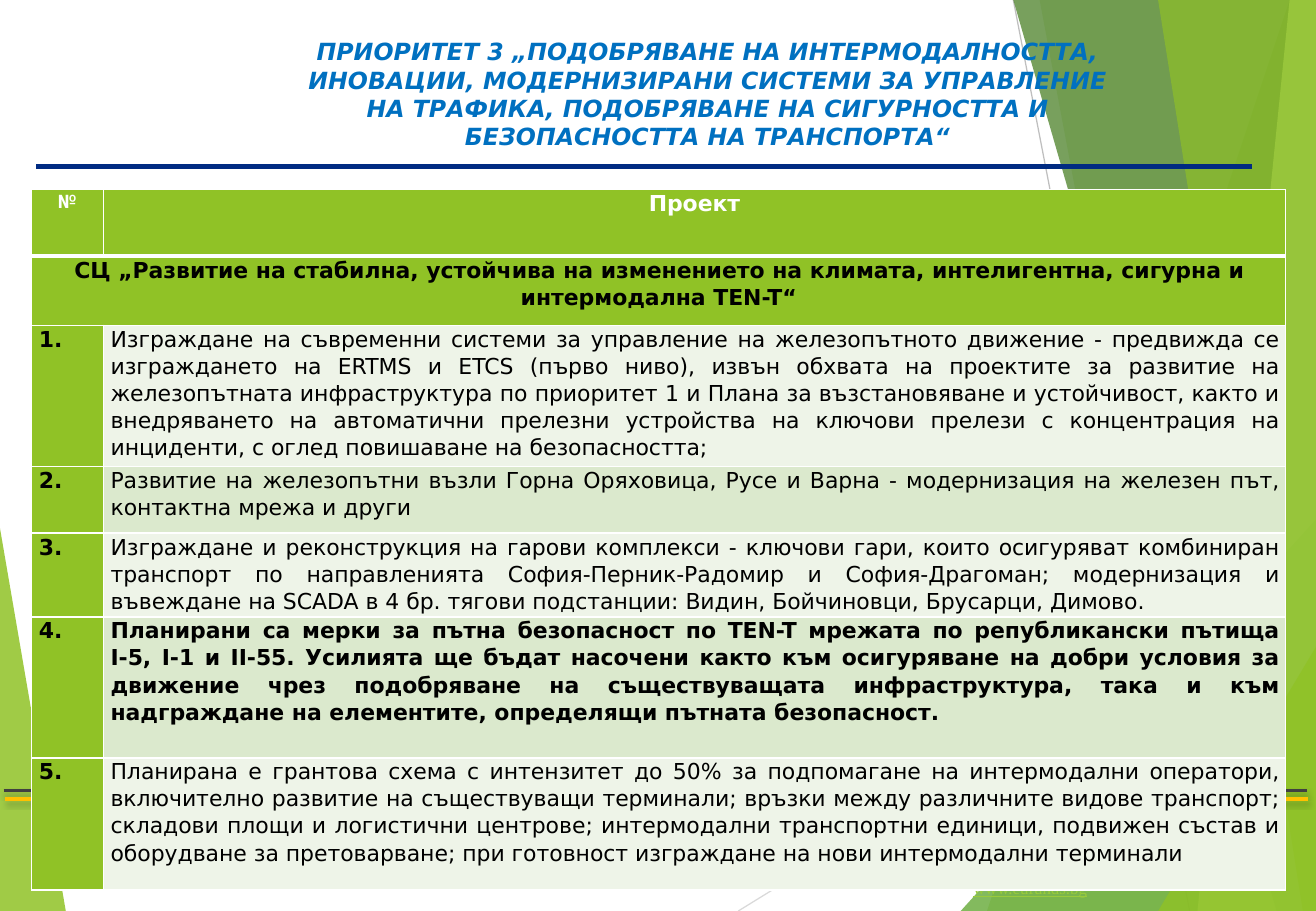
from dataclasses import dataclass

from lxml.etree import SubElement
from pptx import Presentation
from pptx.dml.color import RGBColor
from pptx.enum.shapes import MSO_CONNECTOR
from pptx.enum.text import MSO_ANCHOR, PP_ALIGN
from pptx.oxml.ns import qn
from pptx.util import Inches, Pt


@dataclass(frozen=True)
class Theme:
    green: str = "90C226"
    leaf: str = "54A021"
    forest: str = "3F7819"
    lime: str = "C0E474"
    link: str = "99CA3C"
    title: str = "0070C0"
    rule: str = "002B82"
    dark: str = "404040"
    amber: str = "FFC000"
    black: str = "000000"
    white: str = "FFFFFF"
    bands: tuple = ("EEF4E8", "DBE9CD")
    font: str = "DejaVu Sans"
    number_font: str = "Roboto"
    link_font: str = "Times New Roman"
    title_size: int = 14
    body_size: int = 13
    number_size: int = 11
    link_size: int = 10


theme = Theme()
presentation = Presentation()
presentation.slide_width, presentation.slide_height = Inches(10.83), Inches(7.5)
slide = presentation.slides.add_slide(presentation.slide_layouts[5])
shapes = slide.shapes
# One column and one row are a hundredth of the slide's width and height.
column, row = presentation.slide_width / 100, presentation.slide_height / 100


def write_text(frame, *lines, size=theme.body_size, font=theme.font, color=theme.black,
               bold=False, italic=False, underline=False, align=PP_ALIGN.LEFT, spacing=1.0):
    for index, line in enumerate(lines):
        paragraph = frame.add_paragraph() if index else frame.paragraphs[0]
        paragraph.alignment = align
        paragraph.line_spacing = spacing
        paragraph.space_before = Pt(0)
        run = paragraph.add_run()
        run.text = line
        run.font.name, run.font.size = font, Pt(size)
        run.font.bold, run.font.italic, run.font.underline = bold, italic, underline
        run.font.color.rgb = RGBColor.from_string(color)


def add_line(start, end, color, width, shadow=False):
    line = shapes.add_connector(MSO_CONNECTOR.STRAIGHT,
                                int(start[0] * column), int(start[1] * row),
                                int(end[0] * column), int(end[1] * row))
    line.line.color.rgb = RGBColor.from_string(color)
    line.line.width = Pt(width)
    effects = SubElement(line.element.spPr, qn("a:effectLst"))
    if shadow:
        outer = SubElement(effects, qn("a:outerShdw"), blurRad=str(Pt(3)),
                           dist=str(Pt(2)), dir="5400000", rotWithShape="0")
        shade = SubElement(outer, qn("a:srgbClr"), val=theme.black)
        SubElement(shade, qn("a:alpha"), val="35000")


# Background facets: colour, opacity in percent, corners
add_line((56.1, 100), (100, 60.9), "D9D9D9", 0.75)
add_line((77, 0), (90.4, 100), "BFBFBF", 0.75)
facets = [
    (theme.green, 85, [(0, 58.5), (4.9, 100), (0, 100)]),
    (theme.green, 30, [(97.5, 0), (75.4, 100), (100, 100), (100, 0)]),
    (theme.green, 20, [(78.9, 0), (92, 100), (100, 100), (100, 0)]),
    (theme.leaf, 72, [(72.6, 100), (100, 57.2), (100, 100)]),
    (theme.forest, 70, [(76.7, 0), (97, 100), (100, 100), (100, 0)]),
    (theme.lime, 70, [(98.2, 0), (90.8, 100), (100, 100), (100, 0)]),
    (theme.green, 65, [(88.4, 0), (98.6, 100), (100, 100), (99.9, 0)]),
    (theme.green, 80, [(88.2, 100), (100, 71.3), (100, 100)]),
]
for color, opacity, corners in facets:
    builder = shapes.build_freeform(*corners[0], scale=(column, row))
    builder.add_line_segments(corners[1:], close=True)
    facet = builder.convert_to_shape()
    facet.shadow.inherit = False
    facet.line.fill.background()
    facet.fill.solid()
    facet.fill.fore_color.rgb = RGBColor.from_string(color)
    fill_color = facet.element.spPr.find(".//" + qn("a:srgbClr"))
    SubElement(fill_color, qn("a:alpha"), val=str(opacity * 1000))

# Footer lines and address
add_line((0.28, 86.8), (99.3, 86.8), theme.dark, 2, shadow=True)
add_line((0.37, 87.7), (99.4, 87.7), theme.amber, 2, shadow=True)
address = shapes.add_textbox(int(73.04 * column), int(95.73 * row),
                             int(10.71 * column), int(3.6 * row))
address.text_frame.word_wrap = False
write_text(address.text_frame, "www.eufunds.bg", size=theme.link_size,
           font=theme.link_font, color=theme.link, underline=True)

# Title, brought in front of the facets
add_line((2.77, 18.27), (95.1, 18.27), theme.rule, 3)
title = shapes.title
title.left, title.top = int(21.7 * column), int(3.87 * row)
title.width, title.height = int(64.17 * column), int(13.33 * row)
title.element.getparent().append(title.element)
title.text_frame.word_wrap = True
title.text_frame.vertical_anchor = MSO_ANCHOR.BOTTOM
write_text(title.text_frame,
           "ПРИОРИТЕТ 3 „ПОДОБРЯВАНЕ НА ИНТЕРМОДАЛНОСТТА,",
           "ИНОВАЦИИ, МОДЕРНИЗИРАНИ СИСТЕМИ ЗА УПРАВЛЕНИЕ НА ТРАФИКА, ПОДОБРЯВАНЕ "
           "НА СИГУРНОСТТА И БЕЗОПАСНОСТТА НА ТРАНСПОРТА“",
           size=theme.title_size, color=theme.title, bold=True, italic=True,
           align=PP_ALIGN.CENTER)

# Project table
goal = ("СЦ „Развитие на стабилна, устойчива на изменението на климата, интелигентна, "
        "сигурна и интермодална TEN-T“")
projects = [
    "Изграждане на съвременни системи за управление на железопътното движение - предвижда "
    "се изграждането на ERTMS и ETCS (първо ниво), извън обхвата на проектите за развитие "
    "на железопътната инфраструктура по приоритет 1 и Плана за възстановяване и "
    "устойчивост, както и внедряването на автоматични прелезни устройства на ключови "
    "прелези с концентрация на инциденти, с оглед повишаване на безопасността;",
    "Развитие на железопътни възли Горна Оряховица, Русе и Варна - модернизация на железен "
    "път, контактна мрежа и други",
    "Изграждане и реконструкция на гарови комплекси - ключови гари, които осигуряват "
    "комбиниран транспорт по направленията София-Перник-Радомир и София-Драгоман; "
    "модернизация и въвеждане на SCADA в 4 бр. тягови подстанции: Видин, Бойчиновци, "
    "Брусарци, Димово.",
    "Планирани са мерки за пътна безопасност по TEN-T мрежата по републикански пътища I-5, "
    "I-1 и ІІ-55. Усилията ще бъдат насочени както към осигуряване на добри условия за "
    "движение чрез подобряване на съществуващата инфраструктура, така и към надграждане на "
    "елементите, определящи пътната безопасност.",
    "Планирана е грантова схема с интензитет до 50% за подпомагане на интермодални "
    "оператори, включително развитие на съществуващи терминали; връзки между различните "
    "видове транспорт; складови площи и логистични центрове; интермодални транспортни "
    "единици, подвижен състав и оборудване за претоварване; при готовност изграждане на "
    "нови интермодални терминали",
]
highlighted_project = 4
column_shares = [5.45, 89.84]
row_shares = [7.33, 7.6, 15.47, 7.33, 9.2, 15.47, 14.53]
table = shapes.add_table(len(row_shares), len(column_shares),
                         int(2.4 * column), int(20.8 * row),
                         int(sum(column_shares) * column),
                         int(sum(row_shares) * row)).table
table.horz_banding = False
for table_column, share in zip(table.columns, column_shares):
    table_column.width = int(share * column)
for table_row, share in zip(table.rows, row_shares):
    table_row.height = int(share * row)
table.cell(1, 0).merge(table.cell(1, 1))

for row_index in range(len(row_shares)):
    for column_index in range(len(column_shares)):
        cell = table.cell(row_index, column_index)
        cell.margin_left = cell.margin_right = Inches(0.06)
        cell.margin_top = cell.margin_bottom = 0
        properties = cell._tc.get_or_add_tcPr()
        for side in "LRTB":
            thick = (row_index, side) in [(0, "B"), (1, "T")]
            border = SubElement(properties, qn(f"a:ln{side}"), w=str(Pt(3 if thick else 1)))
            border_fill = SubElement(border, qn("a:solidFill"))
            SubElement(border_fill, qn("a:srgbClr"), val=theme.white)
        is_project = row_index > 1 and column_index == 1
        color = theme.bands[row_index % 2] if is_project else theme.green
        cell.fill.solid()
        cell.fill.fore_color.rgb = RGBColor.from_string(color)

heading = {"color": theme.white, "bold": True, "align": PP_ALIGN.CENTER, "spacing": 1.07}
write_text(table.cell(0, 0).text_frame, "№", size=theme.number_size,
           font=theme.number_font, **heading)
write_text(table.cell(0, 1).text_frame, "Проект", **heading)
write_text(table.cell(1, 0).text_frame, goal, **{**heading, "color": theme.black})
body = {"align": PP_ALIGN.JUSTIFY, "spacing": 1.07}
for number, project in enumerate(projects, start=1):
    write_text(table.cell(number + 1, 0).text_frame, f"{number}.", bold=True, **body)
    write_text(table.cell(number + 1, 1).text_frame, project,
               bold=number == highlighted_project, **body)

presentation.save("out.pptx")
